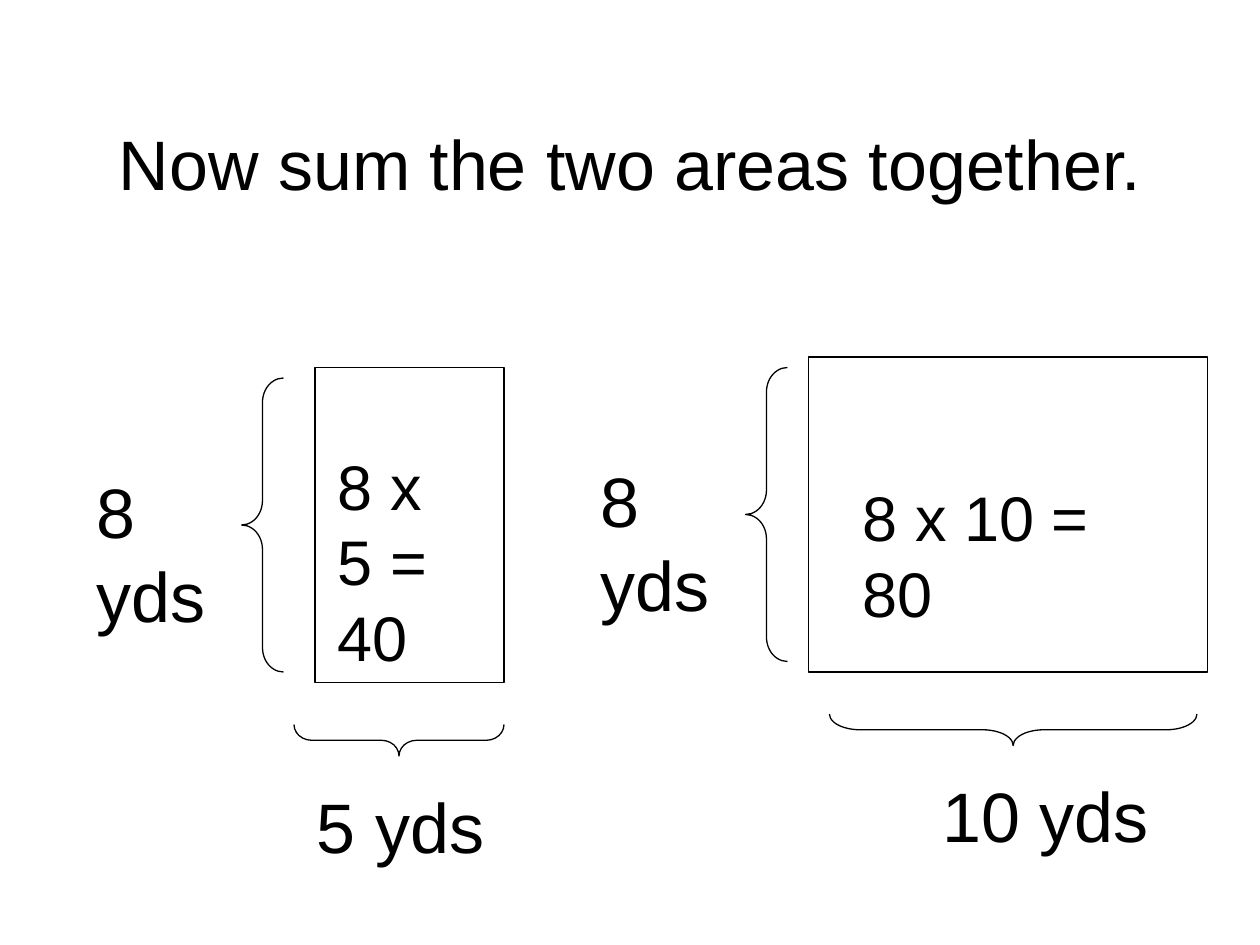
from dataclasses import dataclass

import pptx
import pptx.dml.color
import pptx.enum.shapes
import pptx.enum.text
import pptx.oxml.ns
import pptx.util
from lxml import etree

Pt = pptx.util.Pt
SHAPES = pptx.enum.shapes.MSO_SHAPE
COLORS = {"ink": "000000", "paper": "FFFFFF"}
FONT = "Arial"
RECT_HEIGHT = 180


@dataclass
class Label:
    text: str
    left: float
    top: float
    width: float
    height: float
    size: float = 40
    indent: float = 0


@dataclass
class AreaModel:
    """A rectangle with its braces and labels; lengths in points."""
    left: float
    top: float
    width: float
    side_brace_left: float
    base_brace_left: float
    base_brace_width: float
    base_brace_adj: float
    area: Label
    base: Label


MODELS = [
    AreaModel(180, 210, 108, 138, 168, 120, 0.56,
              Label("8 x 5 = 40", 186, 252, 90, 94, 36),
              Label("5 yds", 174, 444, 120, 55)),
    AreaModel(462, 204, 228, 426, 474, 210, 0.97,
              Label("8 x 10 = 80", 486, 270, 192, 50, 36),
              Label("10 yds", 498, 438, 222, 55, indent=33.4)),
]


def rgb(name: str) -> pptx.dml.color.RGBColor:
    return pptx.dml.color.RGBColor.from_string(COLORS[name])


def style_text(p, size: float) -> None:
    p.font.name = FONT
    p.font.size = Pt(size)
    p.font.color.rgb = rgb("ink")


def add_outline(s, kind, left: float, top: float, width: float, height: float):
    """Add an unfilled preset shape with a thin line."""
    sp = s.shapes.add_shape(kind, Pt(left), Pt(top), Pt(width), Pt(height))
    sp.shadow.inherit = False
    sp.fill.background()
    sp.line.color.rgb = rgb("ink")
    sp.line.width = Pt(0.75)
    return sp


def add_label(s, label: Label) -> None:
    sp = s.shapes.add_textbox(Pt(label.left), Pt(label.top), Pt(label.width), Pt(label.height))
    tf = sp.text_frame
    tf.word_wrap = True
    tf.auto_size = pptx.enum.text.MSO_AUTO_SIZE.SHAPE_TO_FIT_TEXT
    p = tf.paragraphs[0]
    p.text = label.text
    style_text(p, label.size)
    set_relative_spacing(p, 50, label.indent)


def set_relative_spacing(p, percent: int, indent: float) -> None:
    """Set the space before as a share of the line, and the left margin."""
    qn = pptx.oxml.ns.qn
    pPr = p._p.get_or_add_pPr()
    pPr.set("marL", str(Pt(indent)))
    before = etree.Element(qn("a:spcBef"))
    etree.SubElement(before, qn("a:spcPct")).set("val", str(percent * 1000))
    pPr.insert(0, before)


def add_base_brace(s, left: float, top: float, width: float, adj: float) -> None:
    """Add a left brace turned to point down; its frame is given before turning."""
    depth = 18
    sp = add_outline(s, SHAPES.LEFT_BRACE, left + (width - depth) / 2,
                     top + (depth - width) / 2, depth, width)
    sp.rotation = 270
    sp.adjustments[0] = adj


def add_model(s, m: AreaModel) -> None:
    rect = add_outline(s, SHAPES.RECTANGLE, m.left, m.top, m.width, RECT_HEIGHT)
    rect.fill.solid()
    rect.fill.fore_color.rgb = rgb("paper")
    side = add_outline(s, SHAPES.LEFT_BRACE, m.side_brace_left, m.top + 6, 24, RECT_HEIGHT - 12)
    side.adjustments[0] = 0.58
    add_base_brace(s, m.base_brace_left, m.top + RECT_HEIGHT + 24,
                   m.base_brace_width, m.base_brace_adj)
    add_label(s, m.area)
    add_label(s, Label("8 yds", m.side_brace_left - 90, m.top + 54, 90, 103))
    add_label(s, m.base)


def set_title(s, text: str) -> None:
    sp = s.shapes.title
    sp.left, sp.top, sp.width, sp.height = Pt(54), Pt(48), Pt(612), Pt(90)
    tf = sp.text_frame
    tf.auto_size = pptx.enum.text.MSO_AUTO_SIZE.NONE
    tf.vertical_anchor = pptx.enum.text.MSO_ANCHOR.MIDDLE
    p = tf.paragraphs[0]
    p.text = text
    p.alignment = pptx.enum.text.PP_ALIGN.CENTER
    style_text(p, 40)


def main() -> None:
    prs = pptx.Presentation()
    prs.slide_width, prs.slide_height = Pt(720), Pt(540)
    s = prs.slides.add_slide(prs.slide_layouts.get_by_name("Title Only"))
    set_title(s, "Now sum the two areas together.")
    for model in MODELS:
        add_model(s, model)
    prs.save("out.pptx")


if __name__ == "__main__":
    main()
